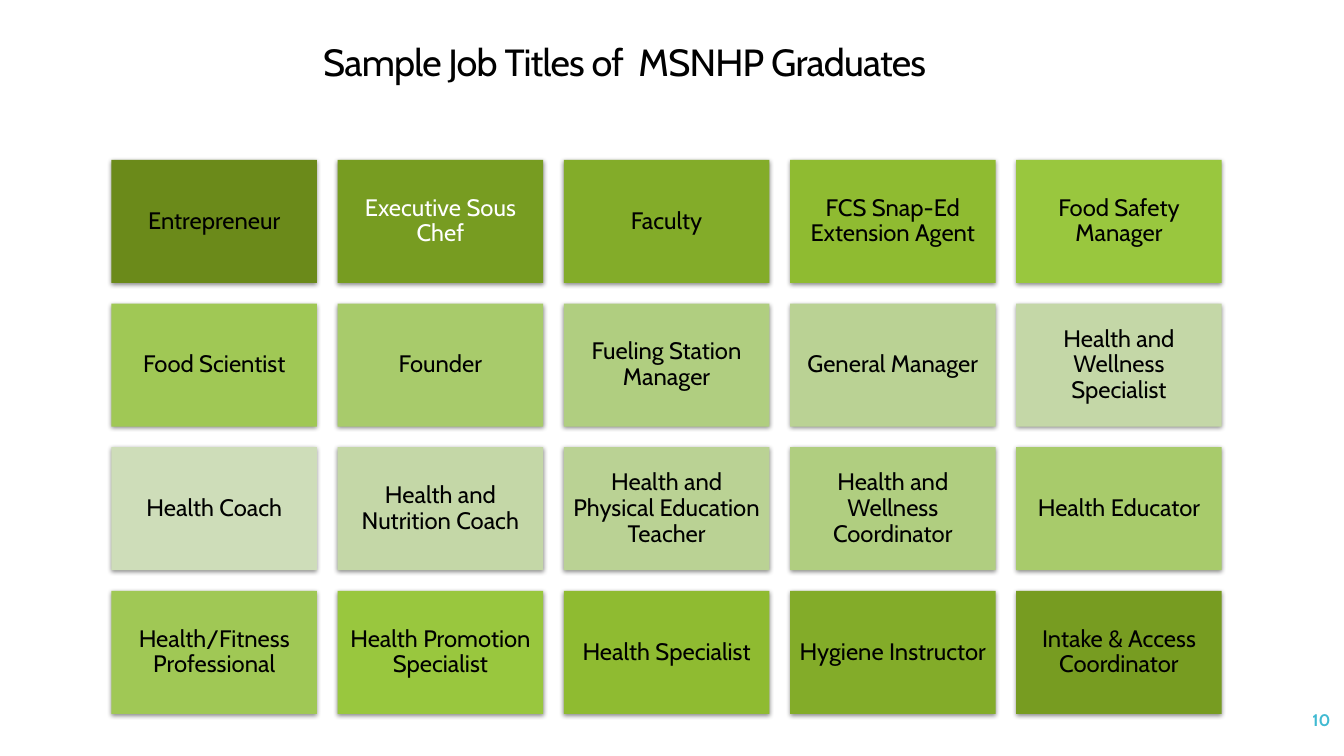
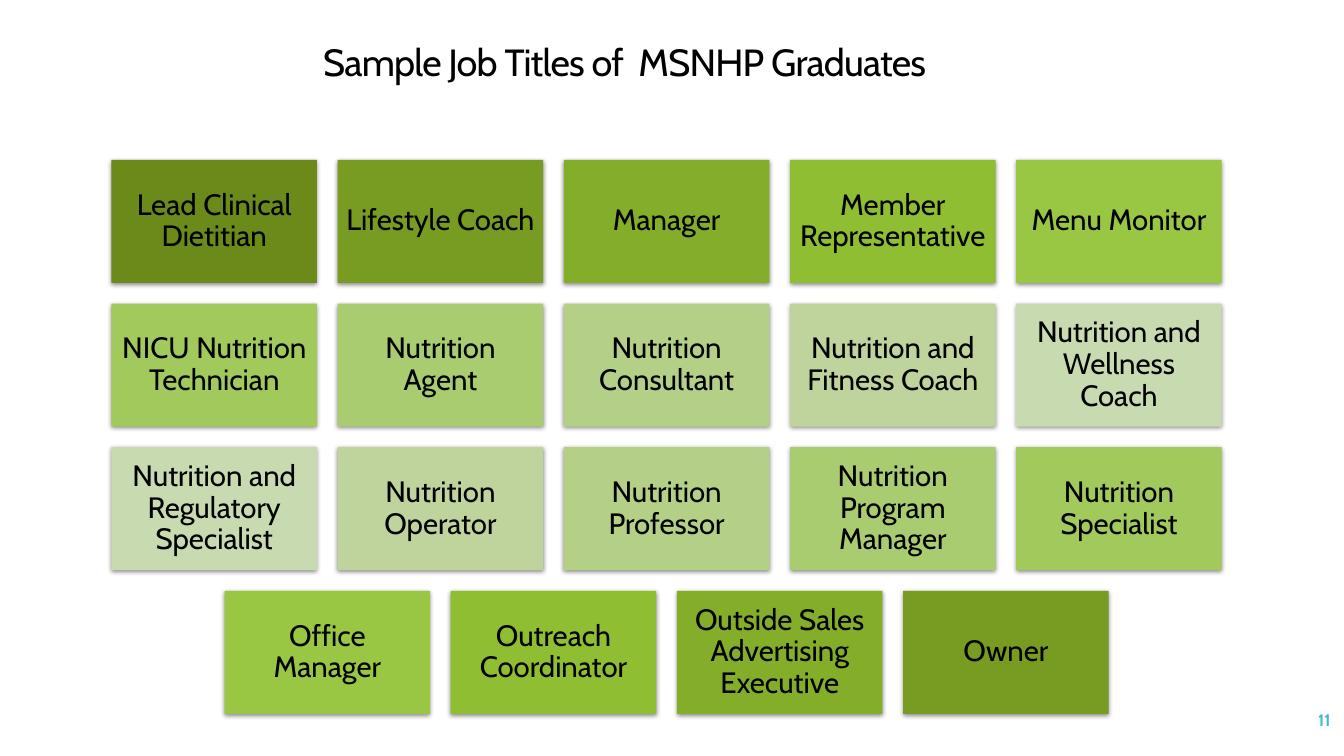
import pptx
import pptx.dml.color
import pptx.enum.shapes
import pptx.enum.text
import pptx.oxml
import pptx.oxml.ns
import pptx.util
from pptx.util import Cm, Pt

TITLE = "Sample Job Titles of  MSNHP Graduates"
FONT = "Cabin"
COLORS = {"text": "000000", "light": "FFFFFF", "number": "40BAD2"}

SLIDES = [
    {
        "number": "10",
        "size": 17,
        "inset": 0.18,
        "light": ["Executive Sous Chef"],
        "ramp": ["6B8A1A", "779C21", "83AC29", "8FBB31", "99C73E", "A0C855",
                 "A8CB6B", "B0CE80", "BAD294", "C4D7A7", "CEDDB9"],
        "jobs": [
            "Entrepreneur", "Executive Sous Chef", "Faculty",
            "FCS Snap-Ed Extension Agent", "Food Safety Manager",
            "Food Scientist", "Founder", "Fueling Station Manager",
            "General Manager", "Health and Wellness Specialist",
            "Health Coach", "Health and Nutrition Coach",
            "Health and Physical Education Teacher",
            "Health and Wellness Coordinator", "Health Educator",
            "Health/Fitness Professional", "Health Promotion Specialist",
            "Health Specialist", "Hygiene Instructor",
            "Intake & Access Coordinator",
        ],
    },
    {
        "number": "11",
        "size": 21,
        "inset": 0.22,
        "light": [],
        "ramp": ["6B8A1A", "789C21", "84AE2A", "90BE33", "9AC743",
                 "A2C95B", "AACC71", "B4D087", "BED49C", "C8DAB0"],
        "jobs": [
            "Lead Clinical Dietitian", "Lifestyle Coach", "Manager",
            "Member Representative", "Menu Monitor",
            "NICU Nutrition Technician", "Nutrition Agent",
            "Nutrition Consultant", "Nutrition and Fitness Coach",
            "Nutrition and Wellness Coach",
            "Nutrition and Regulatory Specialist", "Nutrition Operator",
            "Nutrition Professor", "Nutrition Program Manager",
            "Nutrition Specialist",
            "Office Manager", "Outreach Coordinator",
            "Outside Sales Advertising Executive", "Owner",
        ],
    },
]

COLUMNS = 5
CARD_W, CARD_H, GAP = 5.18, 3.1, 0.52
GRID_CENTER, GRID_TOP = 16.8, 4.03

SHADOW = (
    '<a:outerShdw %s blurRad="44450" dist="13970" dir="5400000" rotWithShape="0">'
    '<a:srgbClr val="000000"><a:alpha val="45000"/></a:srgbClr></a:outerShdw>'
    % pptx.oxml.ns.nsdecls("a")
)


def rgb(value):
    return pptx.dml.color.RGBColor.from_string(value)


def write(sp, text, size, color, align, bold=False):
    tf = sp.text_frame
    tf.word_wrap = True
    tf.auto_size = pptx.enum.text.MSO_AUTO_SIZE.NONE
    tf.vertical_anchor = pptx.enum.text.MSO_ANCHOR.MIDDLE
    p = tf.paragraphs[0]
    p.text = text
    p.alignment = align
    p.line_spacing = 0.9
    p.font.name = FONT
    p.font.size = Pt(size)
    p.font.bold = bold
    p.font.color.rgb = rgb(color)
    return p


def add_card(slide, left, top, text, fill, color, size, inset):
    sp = slide.shapes.add_shape(
        pptx.enum.shapes.MSO_SHAPE.RECTANGLE,
        Cm(left), Cm(top), Cm(CARD_W), Cm(CARD_H))
    sp.fill.solid()
    sp.fill.fore_color.rgb = rgb(fill)
    sp.line.fill.background()
    sp.shadow.inherit = False
    effects = sp._element.spPr.find(pptx.oxml.ns.qn("a:effectLst"))
    effects.append(pptx.oxml.parse_xml(SHADOW))
    tf = sp.text_frame
    tf.margin_left = tf.margin_right = Cm(inset)
    tf.margin_top = tf.margin_bottom = Cm(inset)
    write(sp, text, size, color, pptx.enum.text.PP_ALIGN.CENTER)


def add_cards(slide, data):
    jobs = data["jobs"]
    for i, job in enumerate(jobs):
        row, col = divmod(i, COLUMNS)
        count = min(COLUMNS, len(jobs) - row * COLUMNS)
        row_w = count * CARD_W + (count - 1) * GAP
        left = GRID_CENTER - row_w / 2 + col * (CARD_W + GAP)
        top = GRID_TOP + row * (CARD_H + GAP)
        fill = data["ramp"][min(i, len(jobs) - i)]
        color = COLORS["light" if job in data["light"] else "text"]
        add_card(slide, left, top, job, fill, color, data["size"], data["inset"])


def add_slide(prs, layout, data):
    slide = prs.slides.add_slide(layout)
    p = write(slide.shapes.title, TITLE, 27, COLORS["text"],
              pptx.enum.text.PP_ALIGN.CENTER)
    p.runs[0]._r.get_or_add_rPr().set("spc", "-60")
    number = slide.shapes.add_textbox(Cm(29.54), Cm(17.65), Cm(4.24), Cm(1.02))
    write(number, data["number"], 12, COLORS["number"],
          pptx.enum.text.PP_ALIGN.RIGHT, bold=True)
    add_cards(slide, data)


def main():
    prs = pptx.Presentation()
    prs.slide_width, prs.slide_height = Cm(33.87), Cm(19.05)
    layout = prs.slide_layouts[5]
    title = layout.placeholders[0]
    title.left, title.top = Cm(0), Cm(1.02)
    title.width, title.height = Cm(31.47), Cm(1.19)
    for data in SLIDES:
        add_slide(prs, layout, data)
    prs.save("out.pptx")


if __name__ == "__main__":
    main()
